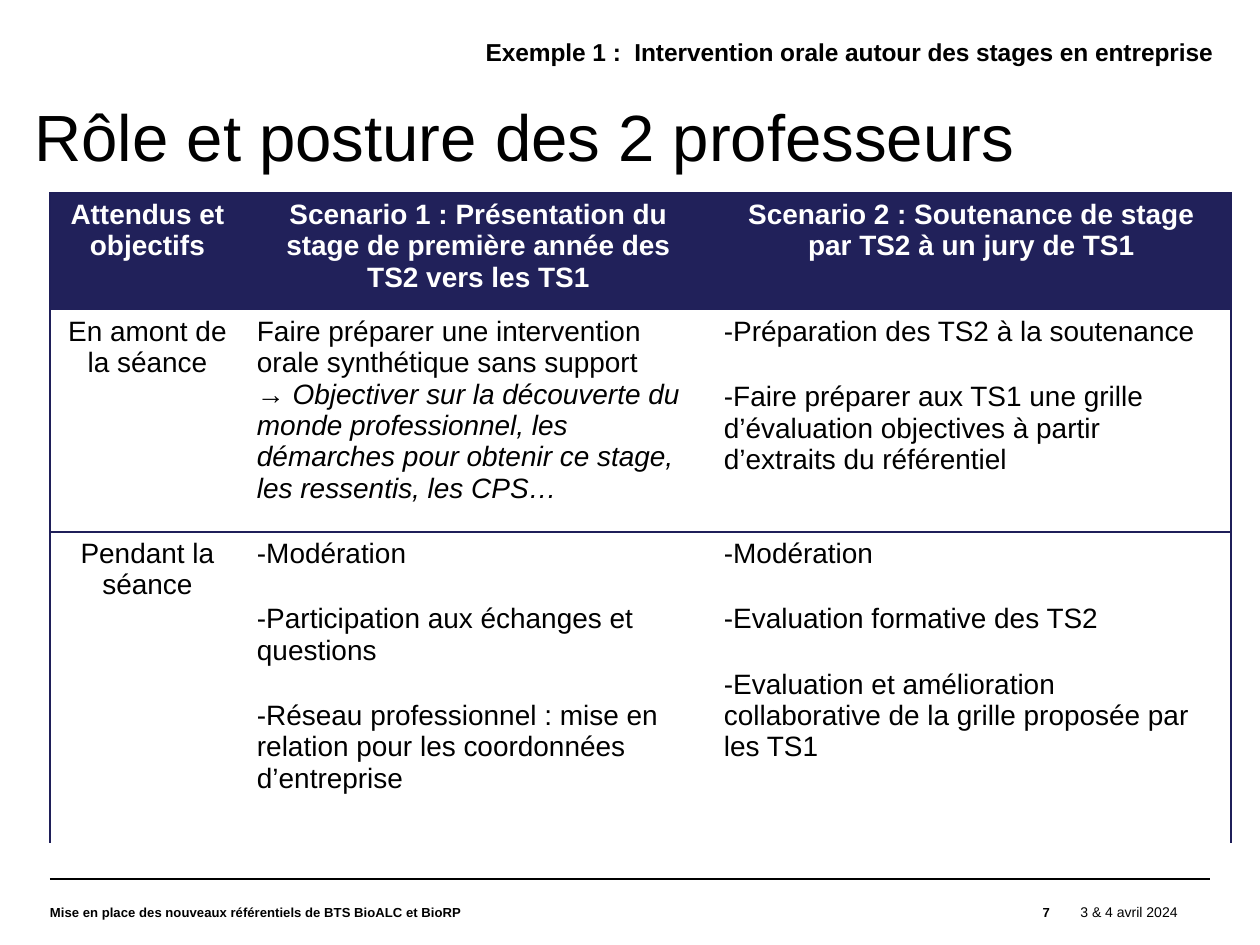
from lxml import etree
from pptx import Presentation
from pptx.dml.color import RGBColor
from pptx.enum.shapes import MSO_CONNECTOR
from pptx.enum.text import MSO_ANCHOR, PP_ALIGN
from pptx.oxml.ns import qn
from pptx.util import Emu, Pt

LEFT, MID, RIGHT = PP_ALIGN.LEFT, PP_ALIGN.CENTER, PP_ALIGN.RIGHT
CENTER = MSO_ANCHOR.MIDDLE
STRAIGHT = MSO_CONNECTOR.STRAIGHT
SCALE = 914400 / 168
PLAIN = "{2D5ABB26-0587-4C30-8999-92F81FD0307C}"
COLORS = {"black": "000000", "white": "FFFFFF", "navy": "21215A", "edge": "1F1F59"}


def px(n):
    return Emu(round(n * SCALE))


def rgb(name):
    return RGBColor.from_string(COLORS[name])


class Deck:
    def __init__(self, width, height, face):
        self.prs = Presentation()
        self.prs.slide_width, self.prs.slide_height = px(width), px(height)
        self.slide = self.prs.slides.add_slide(self.prs.slide_layouts[6])
        self.face = face

    def style(self, para, size, color="black", bold=False, italic=False, align=LEFT):
        para.alignment = align
        font = para.font
        font.name, font.size = self.face, Pt(size)
        font.bold, font.italic = bold, italic
        font.color.rgb = rgb(color)

    def text(self, words, box, size, bold=False, align=MID, spacing=1.0):
        frame = self.slide.shapes.add_textbox(*map(px, box)).text_frame
        frame.word_wrap = True
        frame.vertical_anchor = CENTER
        frame.margin_left = frame.margin_right = 0
        frame.margin_top = frame.margin_bottom = 0
        para = frame.paragraphs[0]
        para.text = words
        para.line_spacing = spacing
        self.style(para, size, bold=bold, align=align)

    def line(self, x1, y1, x2, y2, width):
        rule = self.slide.shapes.add_connector(STRAIGHT, px(x1), px(y1), px(x2), px(y2))
        rule.line.color.rgb = rgb("black")
        rule.line.width = Pt(width)
        etree.SubElement(rule._element.spPr, qn("a:effectLst"))

    def edges(self, cell, sides):
        props = cell._tc.get_or_add_tcPr()
        for side in "LRTB":
            if side in sides:
                line = etree.SubElement(props, qn("a:ln" + side), w=str(Pt(0.75)))
                fill = etree.SubElement(line, qn("a:solidFill"))
                etree.SubElement(fill, qn("a:srgbClr"), val=COLORS["edge"])

    def cell(self, cell, items, sides, head, align, gap):
        cell.margin_left = cell.margin_right = px(12)
        cell.margin_top = cell.margin_bottom = px(6)
        self.edges(cell, sides)
        if head:
            cell.fill.solid()
            cell.fill.fore_color.rgb = rgb("navy")
        else:
            cell.fill.background()
        frame = cell.text_frame
        for i, words in enumerate(items):
            para = frame.add_paragraph() if i else frame.paragraphs[0]
            para.text = words
            if i and words.startswith("-"):
                para.space_before = Pt(gap)
            self.style(para, 12, "white" if head else "black", head,
                       words.startswith("→"), align)

    def table(self, rows, left, top, widths, heights, gap):
        shape = self.slide.shapes.add_table(
            len(rows), len(widths), px(left), px(top), px(sum(widths)), px(sum(heights)))
        table = shape.table
        table.first_row = table.horz_banding = False
        table._tbl.tblPr.find(qn("a:tableStyleId")).text = PLAIN
        for col, width in zip(table.columns, widths):
            col.width = px(width)
        for row, height in zip(table.rows, heights):
            row.height = px(height)
        last = len(widths) - 1
        for r, row in enumerate(rows):
            for c, items in enumerate(row):
                sides = "L" * (c == 0) + "R" * (c == last) + ("B" if r == 1 else "T")
                align = MID if r == 0 or c == 0 else LEFT
                self.cell(table.cell(r, c), items, sides, r == 0, align, gap)


ROWS = [
    [["Attendus et objectifs"],
     ["Scenario 1 : Présentation du stage de première année des TS2 vers les TS1"],
     ["Scenario 2 : Soutenance de stage par TS2 à un jury de TS1"]],
    [["En amont de la séance"],
     ["Faire préparer une intervention orale synthétique sans support",
      "→ Objectiver sur la découverte du monde professionnel, les démarches "
      "pour obtenir ce stage, les ressentis, les CPS…"],
     ["-Préparation des TS2 à la soutenance",
      "-Faire préparer aux TS1 une grille d’évaluation objectives à partir "
      "d’extraits du référentiel"]],
    [["Pendant la séance"],
     ["-Modération",
      "-Participation aux échanges et questions",
      "-Réseau professionnel : mise en relation pour les coordonnées d’entreprise"],
     ["-Modération",
      "-Evaluation formative des TS2",
      "-Evaluation et amélioration collaborative de la grille proposée par les TS1"]],
]


def main():
    deck = Deck(1260, 945, "Arial")
    deck.line(50, 879, 1210, 879, 0.8)
    deck.text("Rôle et posture des 2 professeurs", (0, 102, 1048, 76), 28, spacing=0.9)
    deck.text("Exemple 1 :  Intervention orale autour des stages en entreprise",
              (440, 16, 820, 76), 10.5, bold=True, spacing=0.9)
    deck.table(ROWS, 50, 193, (195, 467, 519), (117, 222, 311), 14.6)
    deck.text("Mise en place des nouveaux référentiels de BTS BioALC et BioRP",
              (50, 879, 813, 66), 5.6, bold=True, align=LEFT)
    deck.text("7", (863, 879, 187, 66), 5.6, bold=True, align=RIGHT)
    deck.text("3 & 4 avril 2024", (1048, 879, 162, 66), 6)
    deck.prs.save("out.pptx")


if __name__ == "__main__":
    main()
